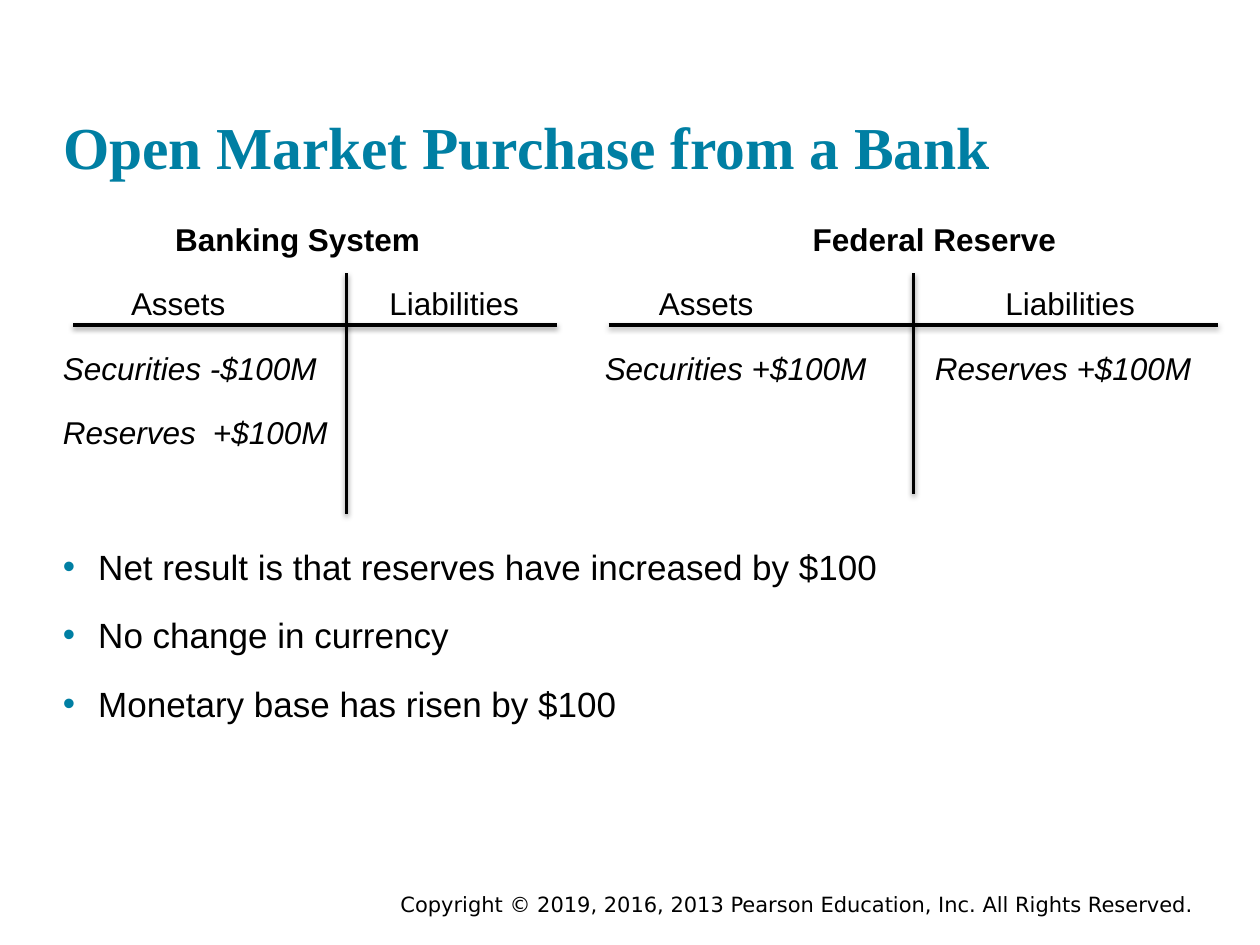
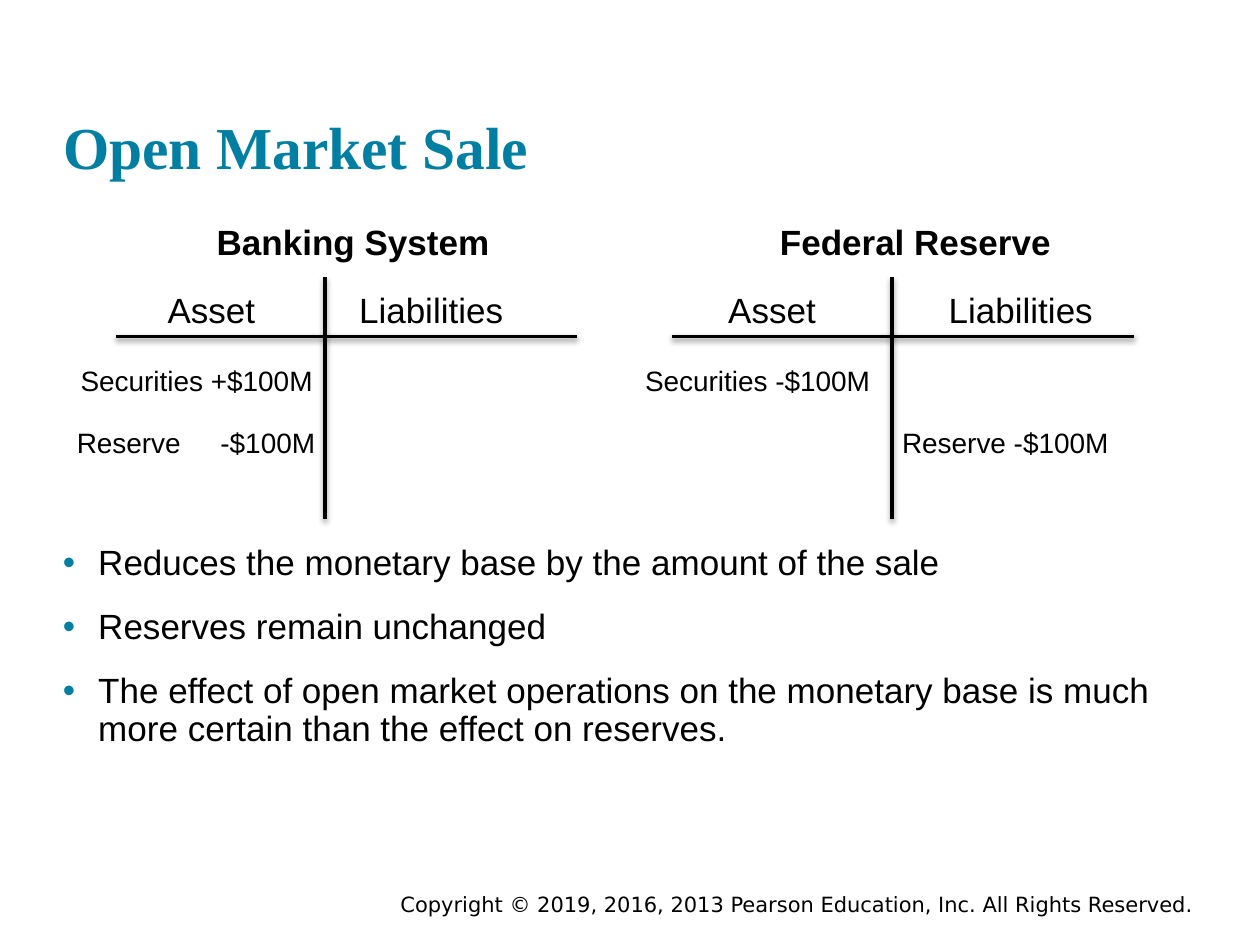
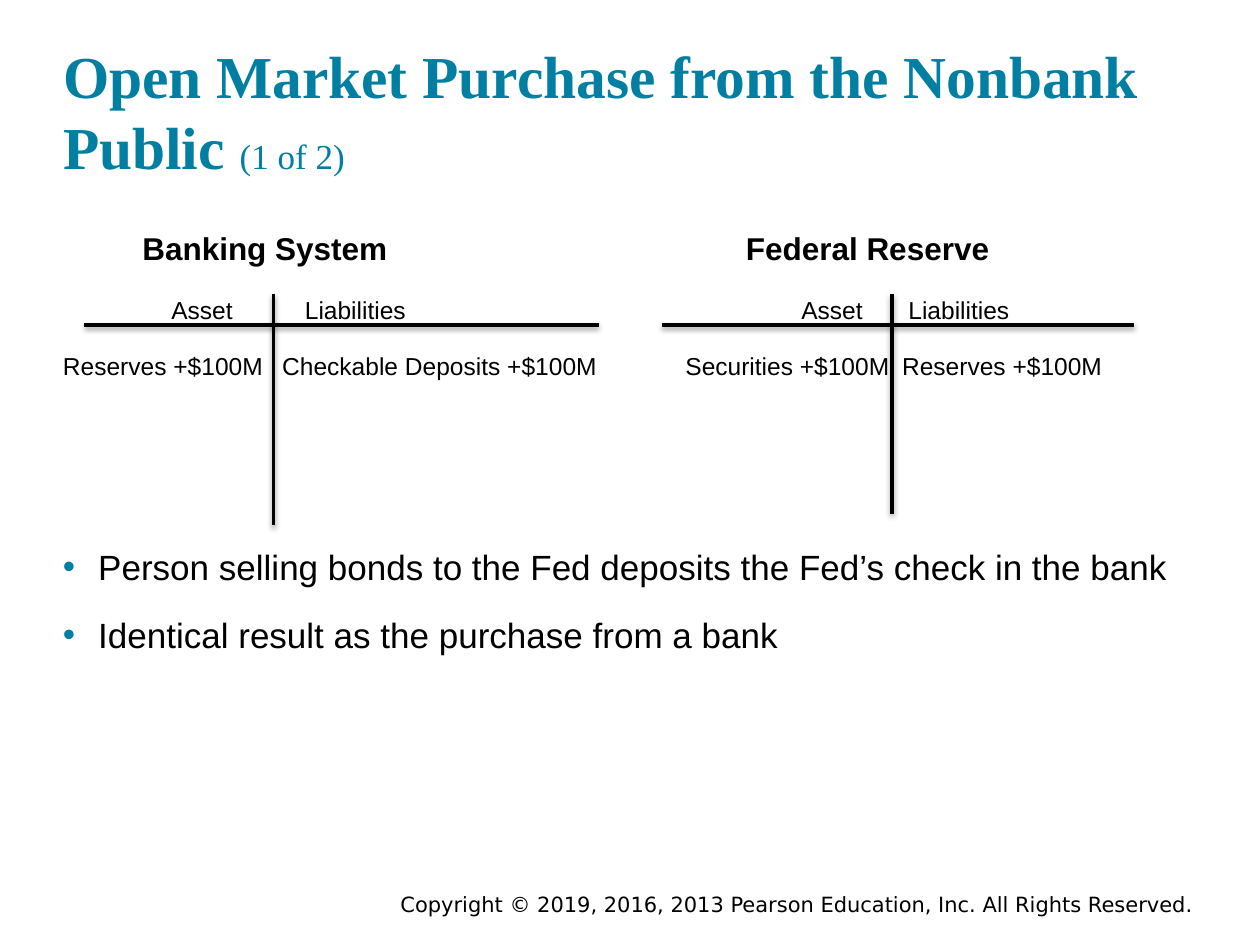
from lxml import etree
from pptx import Presentation
from pptx import util as u
from pptx.dml.color import RGBColor
from pptx.enum import shapes, text
from pptx.oxml import ns

INK = {"teal": "007FA3", "black": "000000"}
HEAD = {"name": "Times New Roman", "size": u.Pt(34), "bold": True}
COUNT = {"name": "Times New Roman", "size": u.Pt(20), "bold": False}
NOTE = {"name": "DejaVu Sans", "size": u.Pt(12)}
BODY = {"name": "Arial", "size": u.Pt(20)}
FLUSH = {
    "word_wrap": True,
    "auto_size": text.MSO_AUTO_SIZE.NONE,
    "margin_left": 0,
    "margin_top": 0,
    "margin_right": 0,
    "margin_bottom": 0,
}
TITLE = (0.5, 0.24, 9, 1.2)
LEDGER = (0.5, 1.75, 9, 2.37)
POINTS = (0.5, 4.33, 9, 2.37)
FOOTER = (2.95, 7.03, 6.75, 0.3)
LEGAL = "Copyright © 2019, 2016, 2013 Pearson Education, Inc. All Rights Reserved."


def row(size, *cells, gap=15, **looks):
    return {"font": {"name": "Arial", "size": u.Pt(size), **looks}, "cells": cells, "gap": gap}


SLIDES = [
    {
        "title": "Open Market Purchase from a Bank",
        "rows": [
            row(18, (0.89, "Banking System"), (5.95, "Federal Reserve"), bold=True),
            row(18, (0.54, "Assets"), (2.59, "Liabilities"), (4.73, "Assets"), (7.48, "Liabilities")),
            row(18, (0, "Securities -$100M"), (4.3, "Securities +$100M"),
                (6.92, "Reserves +$100M"), italic=True),
            row(18, (0, "Reserves"), (1.19, "+$100M"), italic=True),
        ],
        "rule": 0.83,
        "bars": [(0.08, 3.92), (4.33, 9.17)],
        "stems": [(2.25, 0.42, 2.33), (6.75, 0.42, 2.17)],
        "points": [
            "Net result is that reserves have increased by $100",
            "No change in currency",
            "Monetary base has risen by $100",
        ],
    },
    {
        "title": "Open Market Sale",
        "rows": [
            row(20, (1.22, "Banking System"), (5.69, "Federal Reserve"), bold=True),
            row(20, (0.83, "Asset"), (2.35, "Liabilities"), (5.28, "Asset"), (7.03, "Liabilities")),
            row(16, (0.14, "Securities +$100M"), (4.62, "Securities -$100M"), gap=19),
            row(16, (0.11, "Reserve"), (1.25, "-$100M"), (6.66, "Reserve -$100M"), gap=16),
        ],
        "rule": 0.92,
        "bars": [(0.42, 4.08), (4.83, 8.5)],
        "stems": [(2.08, 0.45, 2.37), (6.58, 0.45, 2.37)],
        "points": [
            "Reduces the monetary base by the amount of the sale",
            "Reserves remain unchanged",
            "The effect of open market operations on the monetary base is much "
            "more certain than the effect on reserves.",
        ],
        "pitch": 0.9,
    },
    {
        "title": "Open Market Purchase from the Nonbank Public ",
        "count": "(1 of 2)",
        "drop": 0.07,
        "rows": [
            row(18, (0.63, "Banking System"), (5.42, "Federal Reserve"), bold=True),
            row(14, (0.86, "Asset"), (1.92, "Liabilities"), (5.86, "Asset"),
                (6.71, "Liabilities"), gap=16),
            row(14, (0, "Reserves +$100M"), (1.74, "Checkable Deposits +$100M"),
                (4.94, "Securities +$100M"), (6.66, "Reserves +$100M")),
        ],
        "rule": 0.83,
        "bars": [(0.17, 4.25), (4.75, 8.5)],
        "stems": [(1.67, 0.58, 2.42), (6.58, 0.58, 2.33)],
        "points": [
            "Person selling bonds to the Fed deposits the Fed’s check in the bank",
            "Identical result as the purchase from a bank",
        ],
    },
]


def apply(item, vals):
    for key, val in vals.items():
        setattr(item, key, val)


def node(up, tag, **vals):
    sub = etree.SubElement(up, ns.qn(tag))
    for key, val in vals.items():
        sub.set(key, str(val))
    return sub


def write(para, words, font, ink="black"):
    run = para.add_run()
    run.text = words
    apply(run.font, font)
    run.font.color.rgb = RGBColor.from_string(INK[ink])


def frame(slide, box, drop=0):
    left, top, wide, high = box
    area = slide.shapes.add_textbox(*map(u.Inches, (left, top + drop, wide, high - drop)))
    apply(area.text_frame, FLUSH)
    return area.text_frame


def lines(body, items):
    for num, item in enumerate(items):
        yield num, body.add_paragraph() if num else body.paragraphs[0], item


def add_title(slide, box, words, count):
    head = slide.shapes.title
    apply(head, dict(zip(("left", "top", "width", "height"), map(u.Inches, box))))
    apply(head.text_frame, {**FLUSH, "vertical_anchor": text.MSO_ANCHOR.BOTTOM})
    para = head.text_frame.paragraphs[0]
    para.alignment = text.PP_ALIGN.LEFT
    write(para, words, HEAD, "teal")
    if count:
        write(para, count, COUNT, "teal")


def add_line(slide, box, start, end):
    ends = [u.Inches(base + step) for point in (start, end) for base, step in zip(box, point)]
    line = slide.shapes.add_connector(shapes.MSO_CONNECTOR.STRAIGHT, *ends)
    line.line.width = u.Pt(2)
    line.line.color.rgb = RGBColor.from_string(INK["black"])
    glow = node(line._element.spPr, "a:effectLst")
    shade = node(glow, "a:outerShdw", blurRad=u.Pt(3.1), dist=u.Pt(1.6), dir=5400000, rotWithShape=0)
    node(node(shade, "a:srgbClr", val=INK["black"]), "a:alpha", val=38000)


def add_ledger(slide, box, data):
    body = frame(slide, box, data.get("drop", 0))
    for num, para, item in lines(body, data["rows"]):
        tabs = node(para._p.get_or_add_pPr(), "a:tabLst")
        for pos, words in item["cells"]:
            if pos:
                node(tabs, "a:tab", pos=u.Inches(pos), algn="l")
            write(para, ("\t" if pos else "") + words, item["font"])
        para.space_before = u.Pt(item["gap"] if num else 0)
    for left, right in data["bars"]:
        add_line(slide, box, (left, data["rule"]), (right, data["rule"]))
    for pos, top, base in data["stems"]:
        add_line(slide, box, (pos, top), (pos, base))


def add_points(slide, box, points, pitch):
    for num, para, words in lines(frame(slide, box), points):
        props = para._p.get_or_add_pPr()
        props.set("marL", str(u.Inches(0.28)))
        props.set("indent", str(-u.Inches(0.28)))
        node(node(props, "a:buClr"), "a:srgbClr", val=INK["teal"])
        node(props, "a:buFont", typeface="Arial")
        node(props, "a:buChar", char="•")
        apply(para, {"space_before": u.Pt(15 if num else 0), "line_spacing": pitch})
        write(para, words, BODY)


def add_footer(slide, box):
    body = frame(slide, box)
    apply(body, {"margin_top": u.Inches(0.05), "margin_bottom": u.Inches(0.05)})
    para = body.paragraphs[0]
    para.alignment = text.PP_ALIGN.CENTER
    write(para, LEGAL, NOTE)


def main():
    deck = Presentation()
    apply(deck, {"slide_width": u.Inches(10), "slide_height": u.Inches(7.5)})
    for data in SLIDES:
        slide = deck.slides.add_slide(deck.slide_layouts[5])
        add_footer(slide, FOOTER)
        add_title(slide, TITLE, data["title"], data.get("count"))
        add_ledger(slide, LEDGER, data)
        add_points(slide, POINTS, data["points"], data.get("pitch", 1.0))
    deck.save("out.pptx")


if __name__ == "__main__":
    main()
